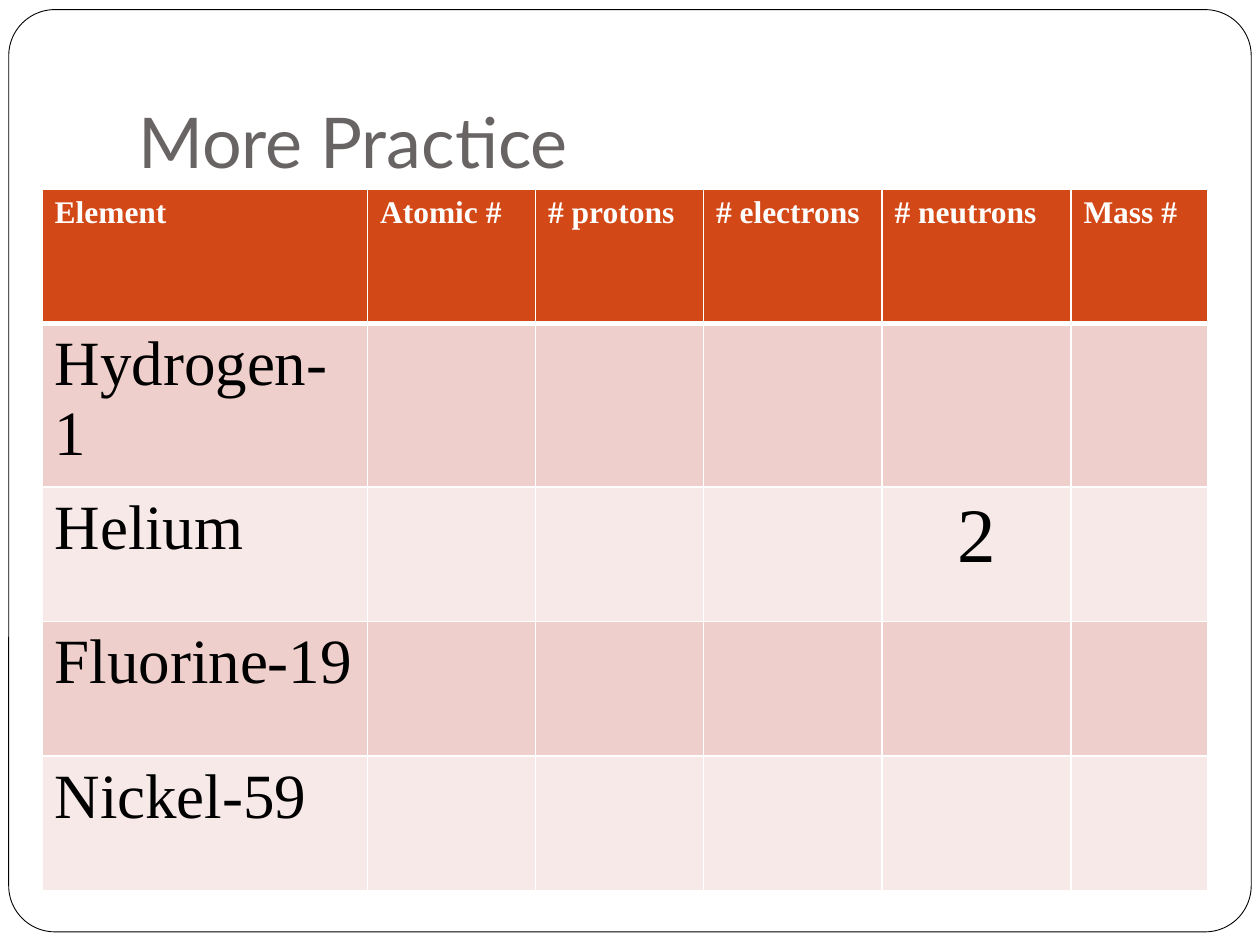
from lxml import etree
from pptx import Presentation
from pptx.dml.color import RGBColor
from pptx.enum import shapes, text
from pptx.oxml import ns
from pptx.util import Pt

HEADERS = ["Element", "Atomic #", "# protons", "# electrons", "# neutrons", "Mass #"]
ELEMENTS = ["Hydrogen-1", "Helium", "Fluorine-19", "Nickel-59"]
COLUMN_WIDTHS = [186, 96, 96, 102, 108, 78]
ROW_HEIGHT = 76.8
BANDS = ["EFCFCC", "F7E9E8"]


def color(code):
    return RGBColor.from_string(code)


def write(frame, words, size, font, code, bold=False, align=text.PP_ALIGN.LEFT):
    frame.text = words
    para = frame.paragraphs[0]
    para.alignment = align
    for span in para.runs:
        span.font.size = Pt(size)
        span.font.name = font
        span.font.bold = bold
        span.font.color.rgb = color(code)


def add_frame(page):
    frame = page.shapes.add_shape(
        shapes.MSO_SHAPE.ROUNDED_RECTANGLE, Pt(5), Pt(5.5), Pt(710), Pt(527))
    frame.adjustments[0] = 0.05
    frame.shadow.inherit = False
    frame.fill.solid()
    frame.fill.fore_color.rgb = color("FFFFFF")
    frame.line.color.rgb = color("000000")
    frame.line.width = Pt(0.5)


def add_title(page, words):
    box = page.shapes.add_textbox(Pt(72), Pt(21.6), Pt(612), Pt(90))
    frame = box.text_frame
    frame.word_wrap = True
    frame.vertical_anchor = text.MSO_ANCHOR.BOTTOM
    frame.margin_bottom = Pt(7.2)
    write(frame, words, 40, "Lato", "696464")


def set_borders(cell, top, bottom):
    properties = cell._tc.get_or_add_tcPr()
    widths = {"lnL": 1, "lnR": 1, "lnT": top, "lnB": bottom}
    for index, (side, width) in enumerate(widths.items()):
        line = etree.Element(ns.qn(f"a:{side}"), w=str(Pt(width)))
        fill = etree.SubElement(line, ns.qn("a:solidFill"))
        etree.SubElement(fill, ns.qn("a:srgbClr"), val="FFFFFF")
        properties.insert(index, line)


def style_cell(cell, fill, top=1, bottom=1):
    cell.fill.solid()
    cell.fill.fore_color.rgb = color(fill)
    set_borders(cell, top, bottom)


def add_practice_table(page):
    count = len(ELEMENTS) + 1
    table = page.shapes.add_table(
        count, len(HEADERS), Pt(24), Pt(108),
        Pt(sum(COLUMN_WIDTHS)), Pt(ROW_HEIGHT * count)).table
    for column, width in zip(table.columns, COLUMN_WIDTHS):
        column.width = Pt(width)
    for row in table.rows:
        row.height = Pt(ROW_HEIGHT)
    for column, header in enumerate(HEADERS):
        cell = table.cell(0, column)
        style_cell(cell, "D34817", bottom=3)
        write(cell.text_frame, header, 18, "Times New Roman", "FFFFFF", bold=True)
    for row, element in enumerate(ELEMENTS, 1):
        for column in range(len(HEADERS)):
            style_cell(table.cell(row, column), BANDS[(row - 1) % 2],
                       top=3 if row == 1 else 1)
        write(table.cell(row, 0).text_frame, element, 36, "Times New Roman", "000000")
    neutrons = table.cell(ELEMENTS.index("Helium") + 1, HEADERS.index("# neutrons"))
    write(neutrons.text_frame, "2", 44, "Times New Roman", "000000",
          align=text.PP_ALIGN.CENTER)


def main():
    deck = Presentation()
    deck.slide_width, deck.slide_height = Pt(720), Pt(540)
    page = deck.slides.add_slide(deck.slide_layouts[6])
    add_frame(page)
    add_title(page, "More Practice")
    add_practice_table(page)
    deck.save("out.pptx")


if __name__ == "__main__":
    main()
